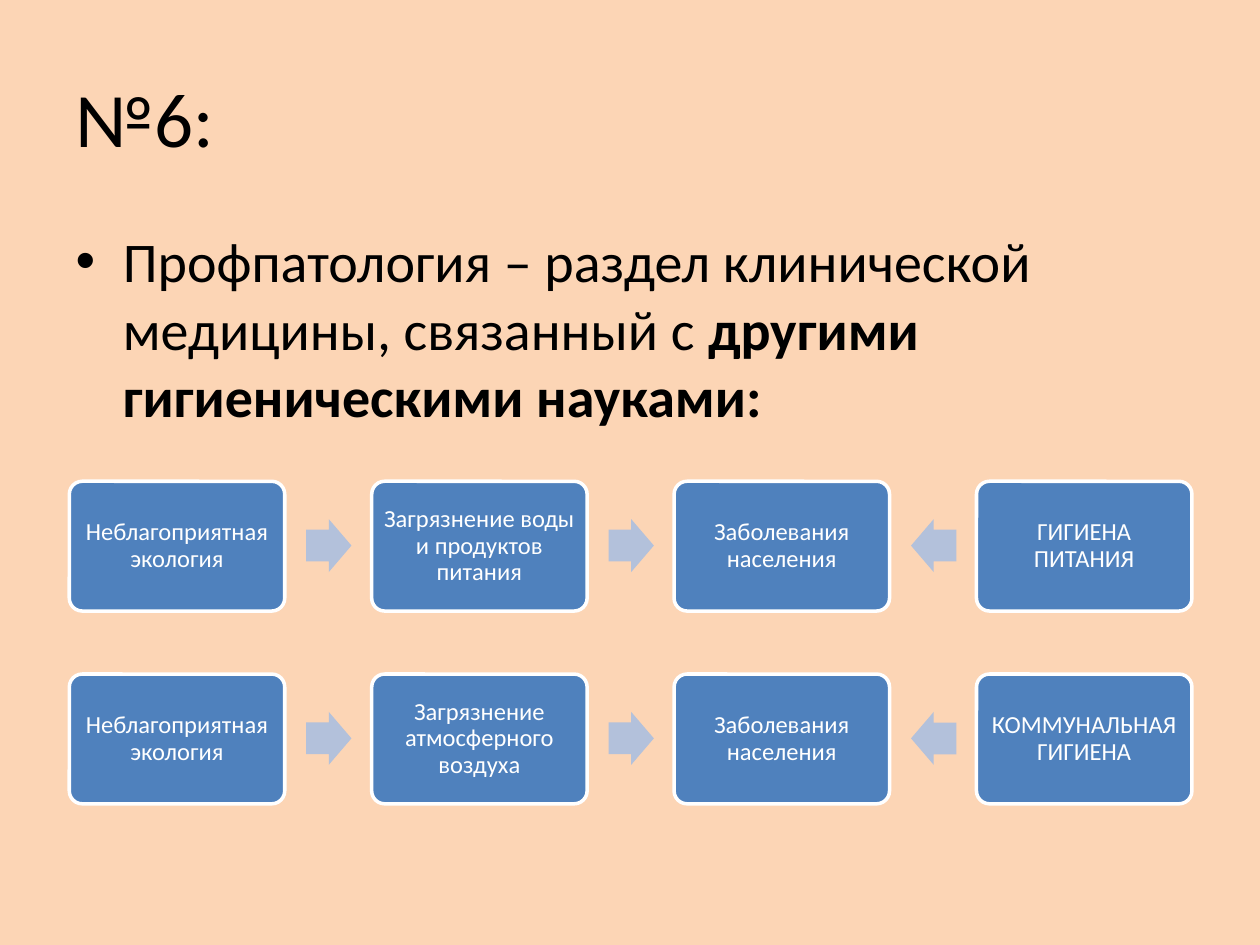
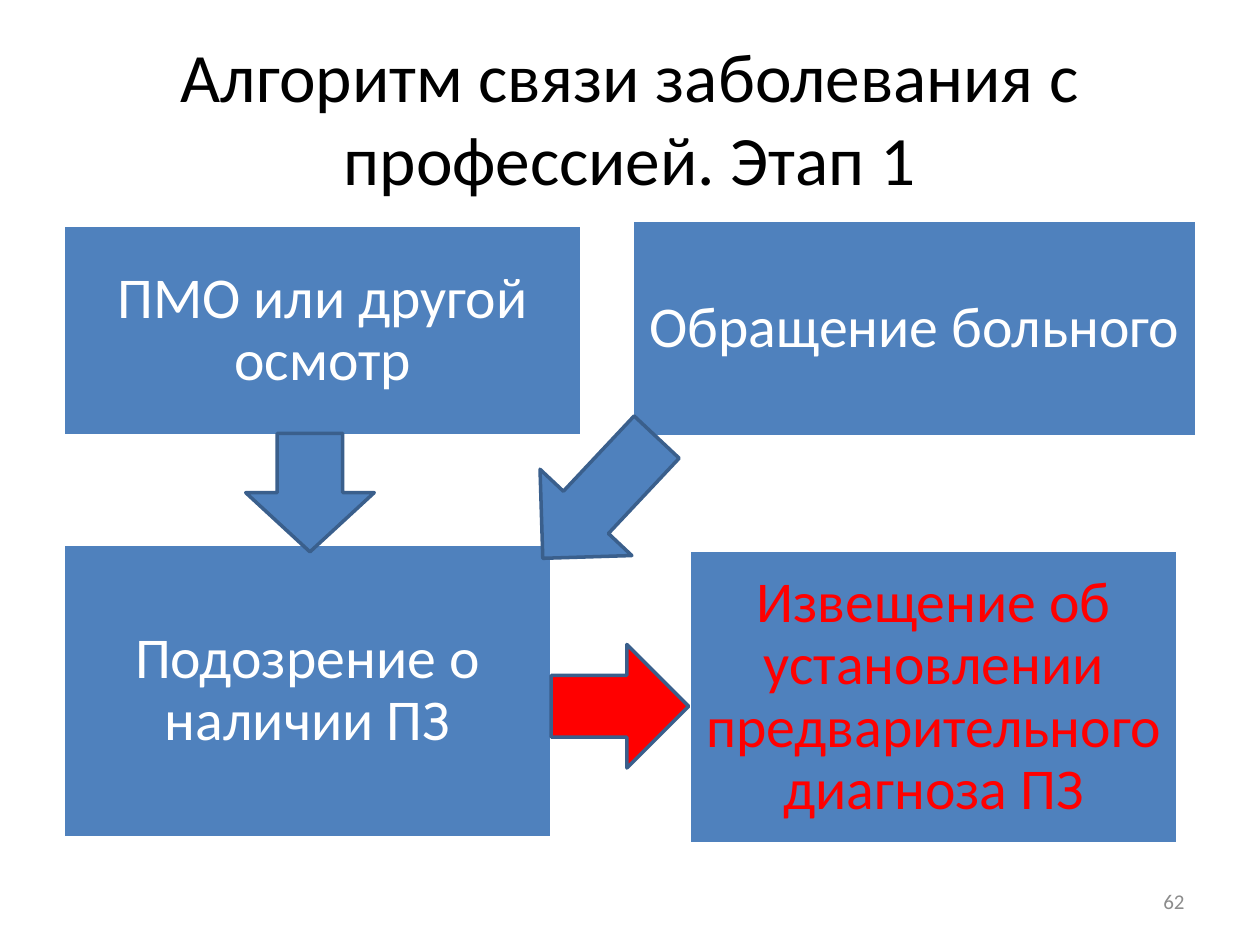
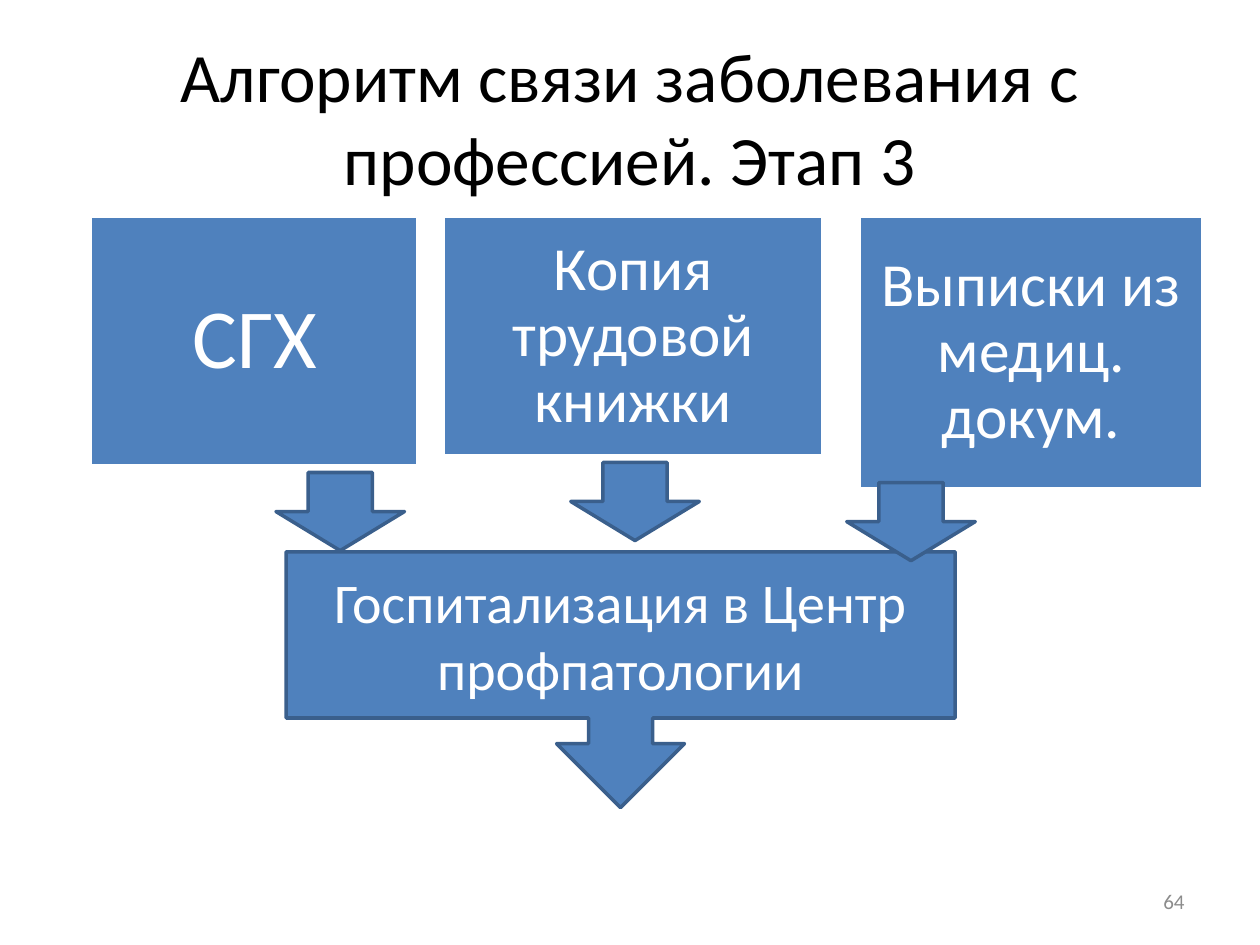
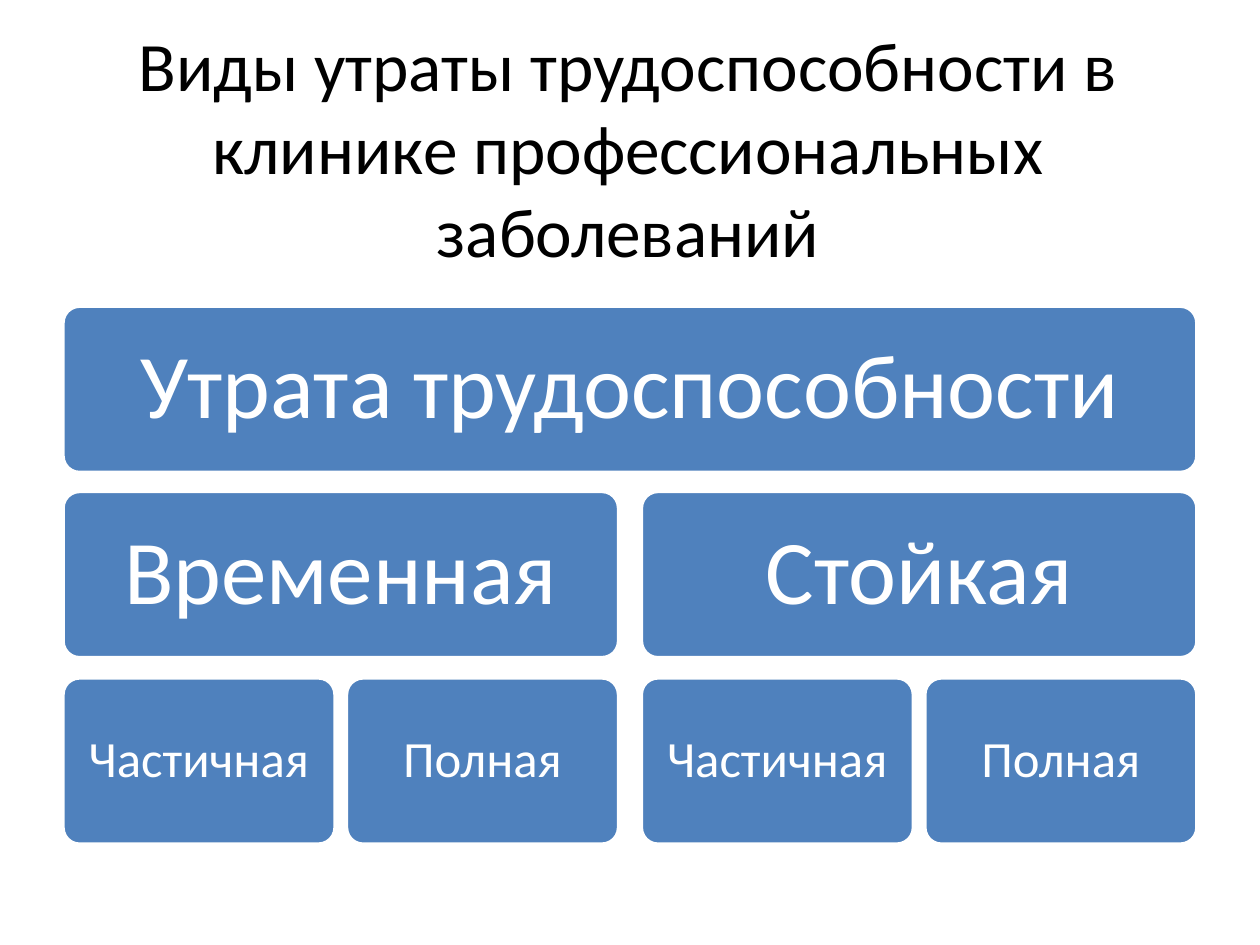
import pptx
import pptx.dml.color
import pptx.enum.shapes
import pptx.enum.text
import pptx.util
from pptx.util import Inches

FONT = "Calibri"
BLACK, WHITE, RED, GREY = "000000", "FFFFFF", "FF0000", "8C8C8C"
BLUE, DARK_BLUE, PALE_BLUE, PEACH = "4F81BD", "3A5F8C", "B3C1DB", "FCD5B5"
SHAPE = pptx.enum.shapes.MSO_SHAPE
ALIGN = pptx.enum.text.PP_ALIGN
MIDDLE = pptx.enum.text.MSO_ANCHOR.MIDDLE
TITLE_AND_CONTENT, TITLE_ONLY = 1, 5
TITLE_AREA = (0.5, 0.3, 9, 1.25)

HYGIENE_TITLE = "№6:"
HYGIENE_INTRO = [
    ("Профпатология – раздел клинической медицины, связанный с ", False),
    ("другими гигиеническими науками:", True),
]
HYGIENE_CHAINS = [
    ["Неблагоприятная экология", "Загрязнение воды и продуктов питания",
     "Заболевания населения", "ГИГИЕНА ПИТАНИЯ"],
    ["Неблагоприятная экология", "Загрязнение атмосферного воздуха",
     "Заболевания населения", "КОММУНАЛЬНАЯ ГИГИЕНА"],
]
CHAIN_ARROW_TURNS = [0, 0, 180]

# Boxes: text, area, text size, text colour.
# Arrows: area, rotation, shaft width, fill.
STAGES = [
    {
        "title": "Алгоритм связи заболевания с профессией. Этап 1",
        "number": "62",
        "boxes": [
            ("ПМО или другой осмотр", (0.5, 1.79, 4.12, 1.67), 33, WHITE),
            ("Обращение больного", (5.02, 1.75, 4.48, 1.72), 33, WHITE),
            ("Подозрение о наличии ПЗ", (0.5, 4.32, 3.88, 2.33), 33, WHITE),
            ("Извещение об установлении предварительного диагноза ПЗ",
             (5.47, 4.37, 3.88, 2.33), 33, RED),
        ],
        "arrows": [
            ((1.95, 3.44, 1.02, 0.94), 0, 0.51, BLUE),
            ((4.26, 3.29, 1, 1.32), 43.2, 0.49, BLUE),
            ((4.43, 5.06, 0.98, 1.09), 270, 0.5, RED),
        ],
    },
    {
        "title": "Алгоритм связи заболевания с профессией. Этап 3",
        "number": "64",
        "boxes": [
            ("СГХ", (0.72, 1.72, 2.6, 1.98), 48, WHITE),
            ("Копия трудовой книжки", (3.52, 1.72, 3.01, 1.9), 35, WHITE),
            ("Выписки из медиц. докум.", (6.82, 1.72, 2.73, 2.16), 35, WHITE),
        ],
        "callout": ("Госпитализация в Центр профпатологии", (2.27, 4.38, 5.31, 2.03)),
        "arrows": [
            ((left, top, 1.02, 0.62), 0, 0.5, BLUE)
            for left, top in [(2.19, 3.75), (4.53, 3.67), (6.72, 3.83)]
        ],
    },
]

LOSS_TITLE = "Виды утраты трудоспособности в клинике профессиональных заболеваний"
LOSS_ROOT = "Утрата трудоспособности"
LOSS_BRANCHES = [
    ("Временная", ["Частичная", "Полная"]),
    ("Стойкая", ["Частичная", "Полная"]),
]


def color(hex_text):
    return pptx.dml.color.RGBColor.from_string(hex_text)


def inches(area):
    return [Inches(length) for length in area]


def style_span(span, size, text_color, bold=False):
    span.font.name = FONT
    span.font.size = pptx.util.Pt(size)
    span.font.bold = bold
    span.font.color.rgb = color(text_color)


def write(shape, text, size, text_color, align=ALIGN.CENTER, spacing=1.0):
    frame = shape.text_frame
    frame.text = text
    frame.word_wrap = True
    frame.auto_size = pptx.enum.text.MSO_AUTO_SIZE.NONE
    frame.vertical_anchor = MIDDLE
    para = frame.paragraphs[0]
    para.alignment = align
    para.line_spacing = spacing
    style_span(para.runs[0], size, text_color)


def place(shape, area):
    shape.left, shape.top, shape.width, shape.height = inches(area)


def add_slide(deck, layout, title, background=WHITE, area=TITLE_AREA, size=39.6,
              align=ALIGN.CENTER):
    page = deck.slides.add_slide(deck.slide_layouts[layout])
    page.background.fill.solid()
    page.background.fill.fore_color.rgb = color(background)
    place(page.shapes.title, area)
    write(page.shapes.title, title, size, BLACK, align)
    return page


def add_figure(page, kind, area, fill=BLUE, line=None, adjustments=()):
    figure = page.shapes.add_shape(kind, *inches(area))
    figure.shadow.inherit = False
    figure.fill.solid()
    figure.fill.fore_color.rgb = color(fill)
    if line:
        figure.line.color.rgb = color(line)
        figure.line.width = pptx.util.Pt(2)
    else:
        figure.line.fill.background()
    for index, value in enumerate(adjustments):
        figure.adjustments[index] = value
    return figure


def add_box(page, text, area, size, text_color=WHITE, rounded=False):
    """Add a white-edged blue box whose margins grow with the text size."""
    kind = SHAPE.ROUNDED_RECTANGLE if rounded else SHAPE.RECTANGLE
    box = add_figure(page, kind, area, line=WHITE, adjustments=[0.1] if rounded else [])
    write(box, text, size, text_color, spacing=0.9)
    frame = box.text_frame
    margin = pptx.util.Pt(0.27 * size)
    frame.margin_left = frame.margin_right = margin
    frame.margin_top = frame.margin_bottom = margin


def build_hygiene(deck):
    page = add_slide(deck, TITLE_AND_CONTENT, HYGIENE_TITLE, PEACH, size=44, align=ALIGN.LEFT)
    body = page.placeholders[1]
    place(body, (0.5, 1.75, 9, 4.95))
    para = body.text_frame.paragraphs[0]
    for text, bold in HYGIENE_INTRO:
        span = para.add_run()
        span.text = text
        style_span(span, 32, BLACK, bold)
    for row, chain in enumerate(HYGIENE_CHAINS):
        top = 3.82 + 1.53 * row
        for column, text in enumerate(chain):
            left = 0.55 + 2.4 * column
            add_box(page, text, (left, top, 1.71, 1.03), 14, rounded=True)
            if column < len(CHAIN_ARROW_TURNS):
                arrow = add_figure(page, SHAPE.RIGHT_ARROW, (left + 1.88, top + 0.3, 0.36, 0.42),
                                   PALE_BLUE, adjustments=[0.6, 0.5])
                arrow.rotation = CHAIN_ARROW_TURNS[column]


def build_stage(deck, stage):
    page = add_slide(deck, TITLE_ONLY, stage["title"])
    for box in stage["boxes"]:
        add_box(page, *box)
    number = page.shapes.add_textbox(*inches((7.17, 6.95, 2.33, 0.4)))
    write(number, stage["number"], 12, GREY, ALIGN.RIGHT)
    if "callout" in stage:
        text, area = stage["callout"]
        callout = add_figure(page, SHAPE.DOWN_ARROW_CALLOUT, area, line=DARK_BLUE)
        write(callout, text, 32, WHITE)
    for area, turn, shaft, fill in stage["arrows"]:
        arrow = add_figure(page, SHAPE.DOWN_ARROW, area, fill, DARK_BLUE, [shaft, 0.5])
        arrow.rotation = turn


def build_loss(deck):
    page = add_slide(deck, TITLE_ONLY, LOSS_TITLE, area=(0.47, 0.3, 9.03, 1.73))
    left, height, leaf_width, leaf_gap = 0.5, 1.32, 2.16, 0.09
    branch_gap = 2 * leaf_gap
    branch_width = 2 * leaf_width + leaf_gap
    root_top, branch_top, leaf_top = 2.43, 3.9, 5.38
    add_box(page, LOSS_ROOT, (left, root_top, 2 * branch_width + branch_gap, height), 52,
            rounded=True)
    for branch_index, (branch, leaves) in enumerate(LOSS_BRANCHES):
        branch_left = left + branch_index * (branch_width + branch_gap)
        add_box(page, branch, (branch_left, branch_top, branch_width, height), 52, rounded=True)
        for leaf_index, leaf in enumerate(leaves):
            leaf_left = branch_left + leaf_index * (leaf_width + leaf_gap)
            add_box(page, leaf, (leaf_left, leaf_top, leaf_width, height), 29, rounded=True)


def main():
    deck = pptx.Presentation()
    deck.slide_width, deck.slide_height = Inches(10), Inches(7.5)
    build_hygiene(deck)
    for stage in STAGES:
        build_stage(deck, stage)
    build_loss(deck)
    deck.save("out.pptx")


if __name__ == "__main__":
    main()
